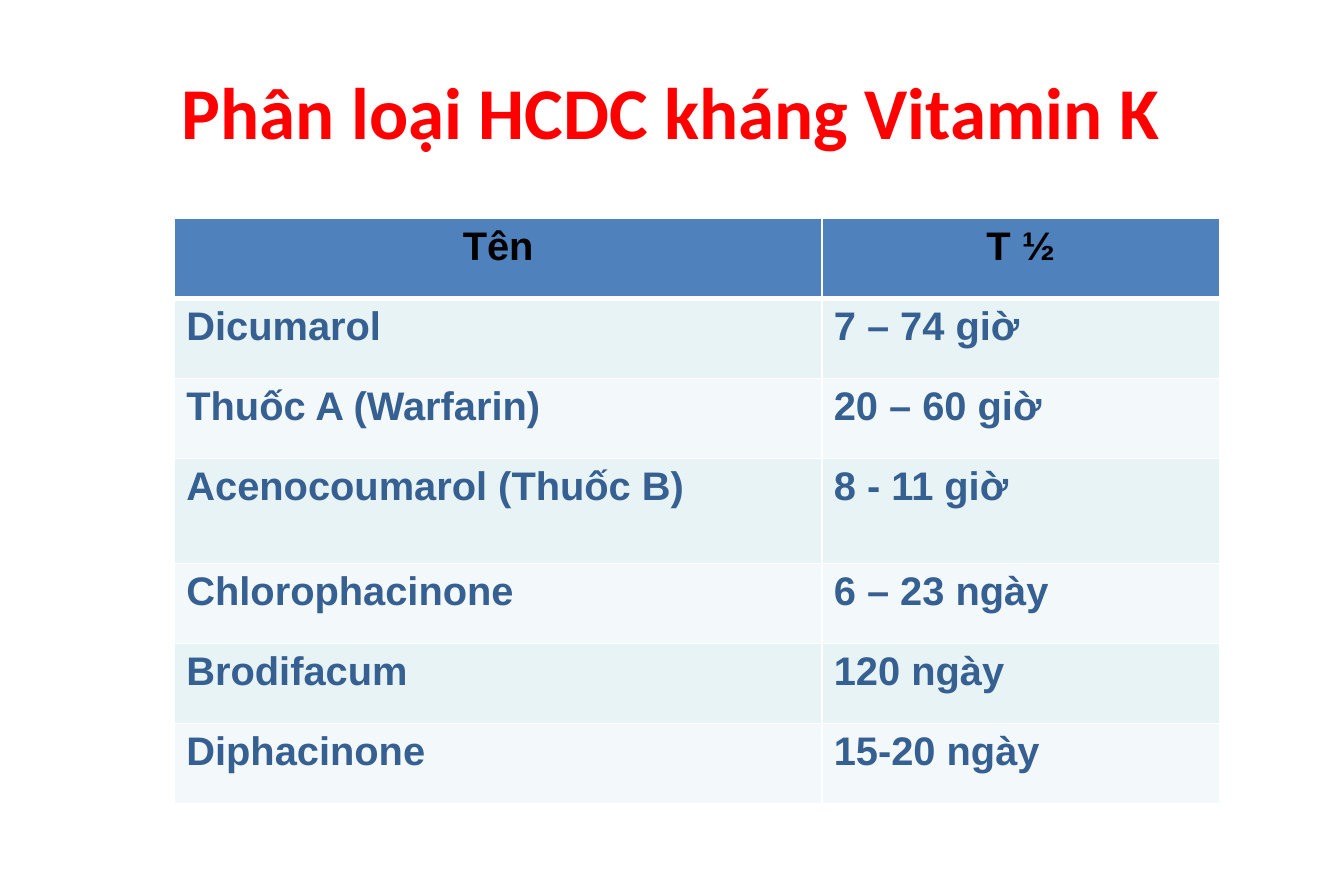
from dataclasses import dataclass

from lxml.etree import SubElement
from pptx import Presentation
from pptx.dml.color import RGBColor
from pptx.enum.text import MSO_ANCHOR, PP_ALIGN
from pptx.oxml.ns import qn
from pptx.util import Inches, Pt


@dataclass
class Drug:
    name: str
    half_life: str
    height: float = 0.67


HEADER = Drug("Tên", "T ½")
DRUGS = [
    Drug("Dicumarol", "7 – 74 giờ"),
    Drug("Thuốc A (Warfarin)", "20 – 60 giờ"),
    Drug("Acenocoumarol (Thuốc B)", "8 - 11 giờ", 0.88),
    Drug("Chlorophacinone", "6 – 23 ngày"),
    Drug("Brodifacum", "120 ngày"),
    Drug("Diphacinone", "15-20 ngày"),
]
COLUMN_WIDTHS = (5.42, 3.33)
BANDS = ("E7F3F4", "F3F9FA")


def rgb(value: str) -> RGBColor:
    """Turn a hex string into a colour."""
    return RGBColor.from_string(value)


def style_text(p, text: str, font: str, size: int, color: str, align) -> None:
    """Write one bold paragraph."""
    p.text = text
    p.alignment = align
    p.font.name = font
    p.font.size = Pt(size)
    p.font.bold = True
    p.font.color.rgb = rgb(color)


def set_borders(cell, top: int, bottom: int) -> None:
    """Give a cell white borders with the given top and bottom widths."""
    tc_pr = cell._tc.get_or_add_tcPr()
    for side, width in (("lnL", 1), ("lnR", 1), ("lnT", top), ("lnB", bottom)):
        line = SubElement(tc_pr, qn(f"a:{side}"), w=str(Pt(width)))
        fill = SubElement(line, qn("a:solidFill"))
        SubElement(fill, qn("a:srgbClr"), val="FFFFFF")


def add_title(slide, text: str) -> None:
    """Add the centred slide title."""
    box = slide.shapes.add_textbox(Inches(0.56), Inches(0.3), Inches(10.12), Inches(1.25))
    tf = box.text_frame
    tf.word_wrap = True
    tf.vertical_anchor = MSO_ANCHOR.MIDDLE
    style_text(tf.paragraphs[0], text, "Calibri", 44, "FF0000", PP_ALIGN.CENTER)


def add_drug_table(slide, drugs: list[Drug]) -> None:
    """Add the table of drugs and their half-lives."""
    rows = [HEADER, *drugs]
    frame = slide.shapes.add_table(
        len(rows), len(COLUMN_WIDTHS), Inches(1.46), Inches(1.83),
        Inches(sum(COLUMN_WIDTHS)), Inches(sum(row.height for row in rows)))
    table = frame.table
    for column, width in zip(table.columns, COLUMN_WIDTHS):
        column.width = Inches(width)
    for i, drug in enumerate(rows):
        table.rows[i].height = Inches(drug.height)
        is_header = i == 0
        fill = "4F81BD" if is_header else BANDS[(i - 1) % 2]
        color = "000000" if is_header else "376092"
        align = PP_ALIGN.CENTER if is_header else PP_ALIGN.LEFT
        for j, text in enumerate((drug.name, drug.half_life)):
            cell = table.cell(i, j)
            set_borders(cell, 3 if i == 1 else 1, 3 if is_header else 1)
            cell.fill.solid()
            cell.fill.fore_color.rgb = rgb(fill)
            style_text(cell.text_frame.paragraphs[0], text, "Arial", 24, color, align)


def main() -> None:
    """Build and save the slide."""
    prs = Presentation()
    prs.slide_width = Inches(11.25)
    prs.slide_height = Inches(7.5)
    slide = prs.slides.add_slide(prs.slide_layouts[6])
    add_title(slide, "Phân loại HCDC kháng Vitamin K")
    add_drug_table(slide, DRUGS)
    prs.save("out.pptx")


if __name__ == "__main__":
    main()
